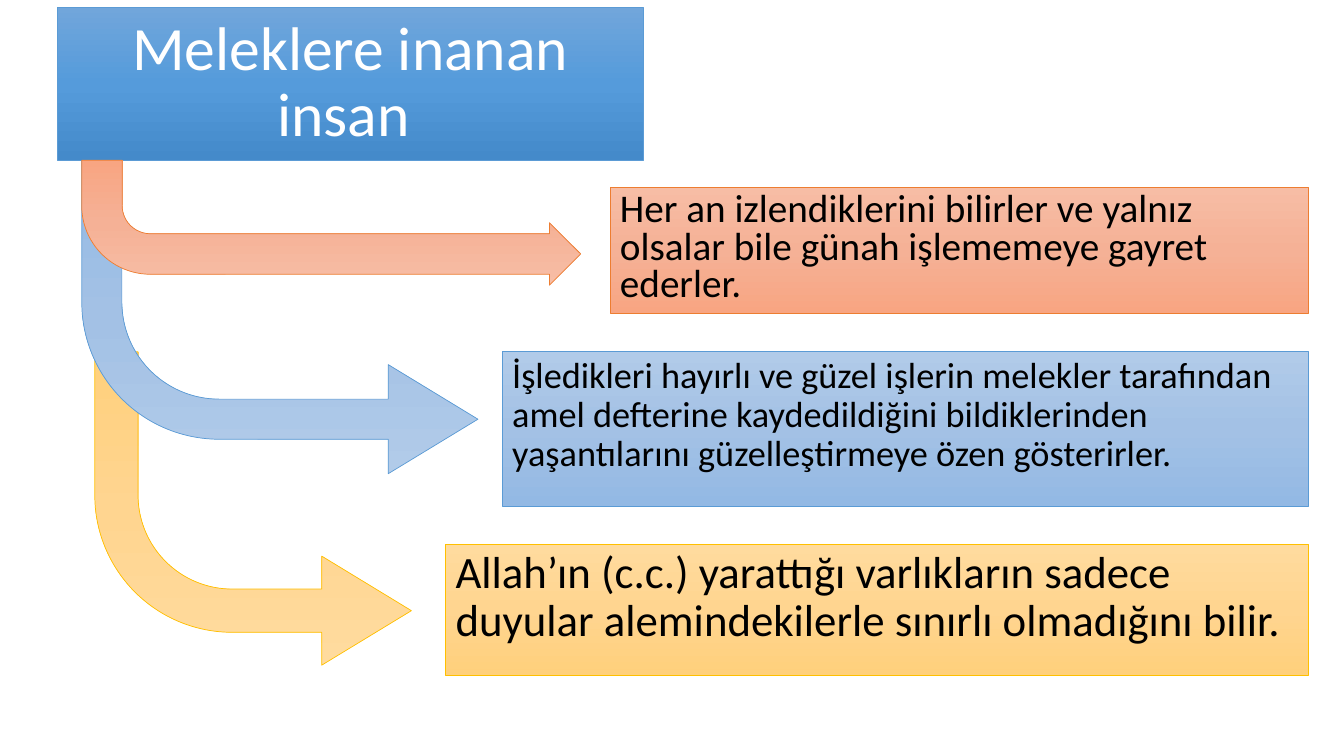
from copy import deepcopy
from dataclasses import dataclass

from lxml import etree
from pptx import Presentation
from pptx.dml.color import RGBColor
from pptx.enum.shapes import MSO_SHAPE
from pptx.enum.text import MSO_ANCHOR, MSO_AUTO_SIZE, PP_ALIGN
from pptx.oxml.ns import qn
from pptx.util import Inches, Pt

RECT, BENT = MSO_SHAPE.RECTANGLE, MSO_SHAPE.BENT_ARROW
LEFT, CENTER = PP_ALIGN.LEFT, PP_ALIGN.CENTER
TOP, MIDDLE = MSO_ANCHOR.TOP, MSO_ANCHOR.MIDDLE
WIDTH, HEIGHT = Inches(13.33), Inches(7.5)

# Shares of the slide, in percent
RIGHT = 97.37   # common right edge of the text boxes
BASE = 21.2     # bottom of the title, where arrows start


@dataclass
class Area:
    left: float
    top: float
    width: float
    height: float


@dataclass
class Tone:
    stops: tuple[str, str, str]
    line: str


@dataclass
class Step:
    text: str
    size: float
    pitch: float
    tone: Tone
    box: Area
    arrow: Area
    bends: tuple[float, ...]
    body: bool = False


HEAD = Tone(("71A6DB", "559BDB", "448ACA"), "5B9BD5")
BLUE = Tone(("B1CBE9", "A3C1E5", "93B9E4"), "5B9BD5")
GOLD = Tone(("FFDB9E", "FFD590", "FFD07C"), "FFC000")
CORAL = Tone(("F7BDA5", "F5B196", "F8A582"), "ED7D31")


def row(left: float, top: float, height: float) -> Area:
    """Area that runs to the common right edge."""
    return Area(left, top, RIGHT - left, height)


# Back to front
STEPS = [
    Step("Allah’ın (c.c.) yarattığı varlıkların sadece duyular alemindekilerle "
         "sınırlı olmadığını bilir.", 32, 0.9, GOLD,
         row(33.16, 72, 17.33), Area(7.05, 46.53, 23.56, 41.47),
         (0.138, 0.174, 0.286, 0.438)),
    Step("İşledikleri hayırlı ve güzel işlerin melekler tarafından amel "
         "defterine kaydedildiğini bildiklerinden yaşantılarını "
         "güzelleştirmeye özen gösterirler.", 25.9, 0.9, BLUE,
         row(37.36, 46.53, 20.4), Area(6.08, BASE, 29.48, 41.47),
         (0.128, 0.174, 0.286, 0.438), body=True),
    Step("Her an izlendiklerini bilirler ve yalnız olsalar bile günah "
         "işlememeye gayret ederler.", 28, 0.8, CORAL,
         row(45.39, 24.8, 16.67), Area(6.08, BASE, 37.13, 16.53),
         (0.324, 0.25, 0.25, 0.549)),
]


def color(value: str) -> RGBColor:
    return RGBColor.from_string(value)


def place(shape, area: Area) -> None:
    shape.left = round(WIDTH * area.left / 100)
    shape.top = round(HEIGHT * area.top / 100)
    shape.width = round(WIDTH * area.width / 100)
    shape.height = round(HEIGHT * area.height / 100)


def paint(shape, tone: Tone) -> None:
    """Vertical three-stop gradient with a thin outline."""
    shape.shadow.inherit = False
    shape.fill.gradient()
    shape.fill.gradient_angle = 270
    stops = shape.element.spPr.find(".//" + qn("a:gsLst"))
    stops.insert(1, deepcopy(stops[0]))
    for index, stop in enumerate(shape.fill.gradient_stops):
        stop.position = index / 2
        stop.color.rgb = color(tone.stops[index])
    shape.line.color.rgb = color(tone.line)
    shape.line.width = Pt(0.5)


def write(shape, text: str, size: float, ink: str, pitch: float,
          align, anchor, before: float) -> None:
    frame = shape.text_frame
    frame.text = text
    frame.word_wrap = True
    frame.auto_size = MSO_AUTO_SIZE.NONE
    frame.vertical_anchor = anchor
    para = frame.paragraphs[0]
    para.alignment = align
    para.line_spacing = pitch
    para.space_before = Pt(before)
    font = para.runs[0].font
    font.name, font.size = "Calibri", Pt(size)
    font.color.rgb = color(ink)


def plain(shape) -> None:
    """Remove the bullet and its indent."""
    props = shape.text_frame.paragraphs[0]._p.get_or_add_pPr()
    props.set("marL", "0")
    props.set("indent", "0")
    etree.SubElement(props, qn("a:buNone"))


def bend(shapes, step: Step) -> None:
    """Bent arrow, turned to run down and right."""
    arrow = shapes.add_shape(BENT, 0, 0, 0, 0)
    place(arrow, step.arrow)
    for index, value in enumerate(step.bends):
        arrow.adjustments[index] = value
    arrow.element.spPr.get_or_add_xfrm().set("flipV", "1")
    paint(arrow, step.tone)


def main() -> None:
    deck = Presentation()
    deck.slide_width, deck.slide_height = WIDTH, HEIGHT
    slide = deck.slides.add_slide(deck.slide_layouts[1])
    shapes = slide.shapes

    # Title
    title = shapes.title
    place(title, Area(4.28, 0.93, 43.59, BASE - 0.93))
    paint(title, HEAD)
    write(title, "Meleklere inanan insan ", 44, "FFFFFF", 0.9,
          CENTER, MIDDLE, 0)

    # Arrows and their text boxes
    for step in STEPS:
        bend(shapes, step)
        box = (slide.placeholders[1] if step.body
               else shapes.add_shape(RECT, 0, 0, 0, 0))
        place(box, step.box)
        paint(box, step.tone)
        write(box, step.text, step.size, "000000", step.pitch, LEFT, TOP, 10)
        if step.body:
            plain(box)

    deck.save("out.pptx")


if __name__ == "__main__":
    main()
